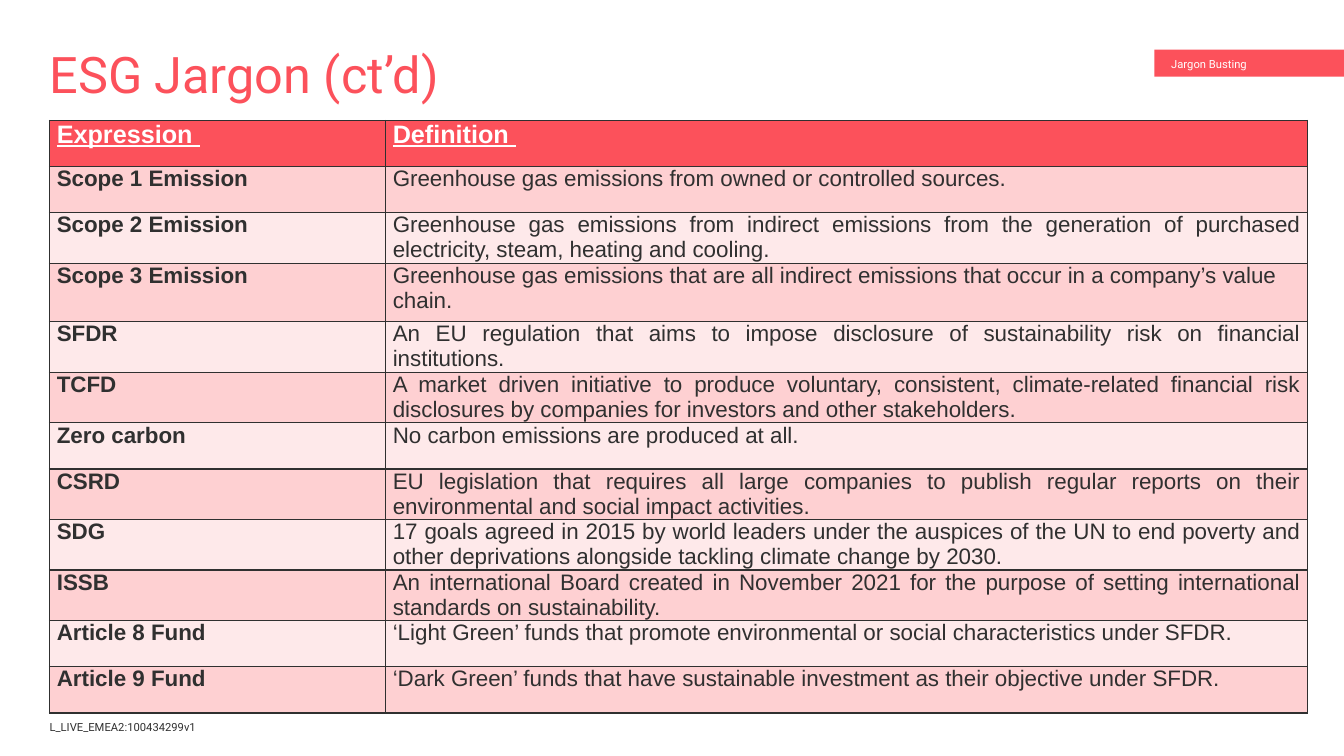
from dataclasses import dataclass

import pptx
import pptx.dml.color
import pptx.enum.shapes
import pptx.enum.text
import pptx.oxml
import pptx.oxml.ns
import pptx.util

Pt = pptx.util.Pt
ALIGN = pptx.enum.text.PP_ALIGN
ANCHOR = pptx.enum.text.MSO_ANCHOR

HUES = {"red": "FC515B", "rose": "FED0D2", "blush": "FEE9EA",
        "ink": "303030", "white": "FFFFFF"}
SPACE = pptx.oxml.ns.nsdecls("a")
LEFT = 35.4
SHORT, MID, TALL = 33, 36.1, 41.8


@dataclass
class Label:
    text: str
    box: tuple[float, float, float, float]
    size: float
    hue: str
    anchor: ANCHOR
    space: float = 1.0
    inset: float = 0
    fill: str | None = None


@dataclass
class Term:
    name: str
    sense: str
    high: float = MID
    align: ALIGN = ALIGN.JUSTIFY


LABELS = [
    Label("L_LIVE_EMEA2:100434299v1", (LEFT, 504.7, 300, 19.4), 8, "ink", ANCHOR.BOTTOM),
    Label("ESG Jargon (ct’d)", (LEFT, 35.4, 689, 31), 36, "red", ANCHOR.TOP, 0.9),
    Label("Jargon Busting", (824.6, 35.4, 135.4, 19.4), 8, "white", ANCHOR.MIDDLE,
          1.2, 12, "red"),
]

TERMS = [
    Term("Expression ", "Definition ", SHORT),
    Term("Scope 1 Emission", "Greenhouse gas emissions from owned or controlled sources.",
         SHORT, ALIGN.LEFT),
    Term("Scope 2 Emission", "Greenhouse gas emissions from indirect emissions from the "
         "generation of purchased electricity, steam, heating and cooling."),
    Term("Scope 3 Emission", "Greenhouse gas emissions that are all indirect emissions that "
         "occur in a company’s value chain.", TALL, ALIGN.LEFT),
    Term("SFDR", "An EU regulation that aims to impose disclosure of sustainability risk on "
         "financial institutions."),
    Term("TCFD", "A market driven initiative to produce voluntary, consistent, "
         "climate-related financial risk disclosures by companies for investors and other "
         "stakeholders."),
    Term("Zero carbon", "No carbon emissions are produced at all.", SHORT),
    Term("CSRD", "EU legislation that requires all large companies to publish regular "
         "reports on their environmental and social impact activities."),
    Term("SDG", "17 goals agreed in 2015 by world leaders under the auspices of the UN to "
         "end poverty and other deprivations alongside tackling climate change by 2030."),
    Term("ISSB", "An international Board created in November 2021 for the purpose of setting "
         "international standards on sustainability."),
    Term("Article 8 Fund", "‘Light Green’ funds that promote environmental or social "
         "characteristics under SFDR.", SHORT),
    Term("Article 9 Fund", "‘Dark Green’ funds that have sustainable investment as their "
         "objective under SFDR.", SHORT, ALIGN.LEFT),
]


def tint(hue: str) -> pptx.dml.color.RGBColor:
    return pptx.dml.color.RGBColor.from_string(HUES[hue])


def apply(item, form: dict) -> None:
    for key, value in form.items():
        setattr(item, key, value)


def write(part, text: str, hue: str, form: dict, look: dict) -> None:
    part.text = text
    line = part.paragraphs[0]
    apply(line, form)
    font = line.runs[0].font
    apply(font, look)
    font.color.rgb = tint(hue)
    # The paragraph mark takes the text size, so it does not stretch the last line
    line._p.append(pptx.oxml.parse_xml(
        f'<a:endParaRPr {SPACE} sz="{int(look["size"].pt * 100)}">'
        f'<a:latin typeface="{look["name"]}"/></a:endParaRPr>'))


def draw_label(slide, label: Label) -> None:
    box = [Pt(n) for n in label.box]
    if label.fill:
        shape = slide.shapes.add_shape(pptx.enum.shapes.MSO_SHAPE.RECTANGLE, *box)
        shape.shadow.inherit = False
        shape.fill.solid()
        shape.fill.fore_color.rgb = tint(label.fill)
        shape.line.fill.background()
    else:
        shape = slide.shapes.add_textbox(*box)
    frame = shape.text_frame
    apply(frame, {"word_wrap": True, "vertical_anchor": label.anchor,
                  "margin_left": Pt(label.inset), "margin_right": 0,
                  "margin_top": 0, "margin_bottom": 0})
    write(frame, label.text, label.hue,
          {"alignment": ALIGN.LEFT, "line_spacing": label.space},
          {"name": "Roboto", "size": Pt(label.size)})


def edge(cell, side: str) -> None:
    cell._tc.get_or_add_tcPr().append(pptx.oxml.parse_xml(
        f'<a:ln{side} {SPACE} w="{Pt(1)}"><a:solidFill>'
        f'<a:srgbClr val="{HUES["ink"]}"/></a:solidFill></a:ln{side}>'))


def draw_cell(cell, text: str, row: int, bold: bool, align: ALIGN) -> None:
    head = row == 0
    apply(cell, {"margin_left": Pt(5.2), "margin_right": Pt(5.2),
                 "margin_top": 0, "margin_bottom": 0, "vertical_anchor": ANCHOR.TOP})
    for side in "LRTB":
        edge(cell, side)
    cell.fill.solid()
    cell.fill.fore_color.rgb = tint("red" if head else "rose" if row % 2 else "blush")
    write(cell.text_frame, text, "white" if head else "ink",
          {"alignment": align, "space_after": Pt(13 if align == ALIGN.JUSTIFY else 0)},
          {"name": "Arial", "size": Pt(18 if head else 16),
           "bold": bold, "underline": head})


def draw_terms(slide, terms: list[Term]) -> None:
    wide = (240, 658.8)
    table = slide.shapes.add_table(
        len(terms), len(wide), Pt(LEFT), Pt(86), Pt(sum(wide)),
        Pt(sum(term.high for term in terms))).table
    table.horz_banding = False
    for col, width in zip(table.columns, wide):
        col.width = Pt(width)
    for row, term in enumerate(terms):
        table.rows[row].height = Pt(term.high)
        draw_cell(table.cell(row, 0), term.name, row, True, ALIGN.JUSTIFY)
        draw_cell(table.cell(row, 1), term.sense, row, row == 0, term.align)


def main() -> None:
    deck = pptx.Presentation()
    apply(deck, {"slide_width": Pt(960), "slide_height": Pt(540)})
    slide = deck.slides.add_slide(deck.slide_layouts[6])
    # Glossary table
    draw_terms(slide, TERMS)
    # Footer, title and tag, in front of the table
    for label in LABELS:
        draw_label(slide, label)
    deck.save("out.pptx")


if __name__ == "__main__":
    main()
